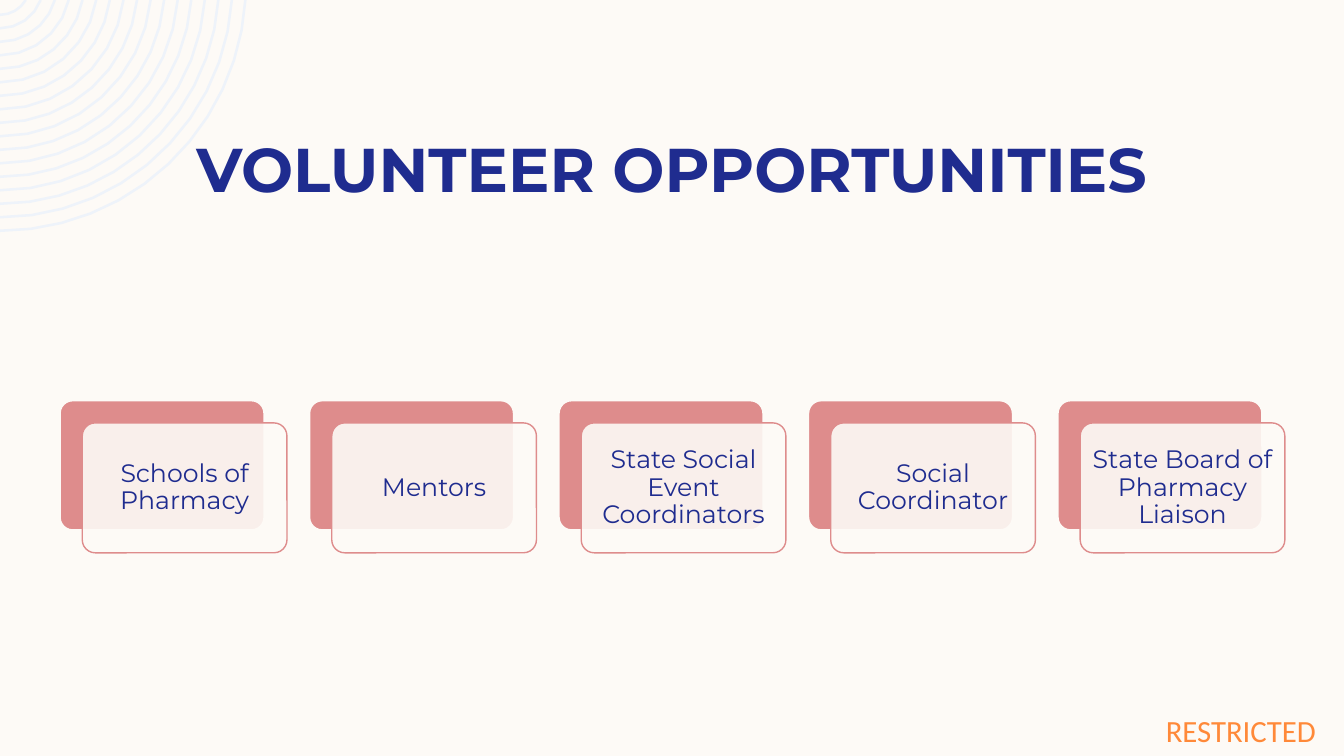
from math import asin, cos, pi, sin

from lxml.etree import SubElement
from pptx import Presentation
from pptx.dml.color import RGBColor
from pptx.enum.shapes import MSO_SHAPE as Preset
from pptx.enum.text import MSO_ANCHOR as Anchor, MSO_AUTO_SIZE as AutoSize, PP_ALIGN as Align
from pptx.oxml.ns import qn
from pptx.util import Pt

CREAM = RGBColor(0xFD, 0xFA, 0xF6)
NAVY = RGBColor(0x1F, 0x2C, 0x8F)
ROSE = RGBColor(0xDE, 0x8C, 0x8C)
ICE = RGBColor(0xEE, 0xF3, 0xFA)
ORANGE = RGBColor(0xFF, 0x89, 0x39)

ROLES = [
    "Schools of Pharmacy",
    "Mentors",
    "State Social Event Coordinators",
    "Social Coordinator",
    "State Board of Pharmacy Liaison",
]


def write(shape, text, size, color, font="Montserrat", bold=False, align=Align.CENTER,
          anchor=Anchor.MIDDLE, margins=(0, 0, 0, 0), spacing=0.9):
    frame = shape.text_frame
    frame.word_wrap = True
    frame.auto_size = AutoSize.NONE
    frame.vertical_anchor = anchor
    frame.margin_left, frame.margin_top, frame.margin_right, frame.margin_bottom = map(Pt, margins)
    para = frame.paragraphs[0]
    para.alignment = align
    para.line_spacing = spacing
    span = para.add_run()
    span.text = text
    span.font.name = font
    span.font.size = Pt(size)
    span.font.bold = bold
    span.font.color.rgb = color


def add_rings(page, left, top, count=17, smallest=21.4, step=9.64, rise=10.8):
    def arc(radius, steps):
        start = asin(rise / radius)
        angles = [start + (pi / 2 - start) * i / steps for i in range(steps + 1)]
        return [(Pt(left + radius * cos(a)), Pt(top - rise + radius * sin(a))) for a in angles]

    arcs = [arc(smallest + step * index, 4 + index // 2) for index in range(count)]
    builder = page.shapes.build_freeform(*arcs[0][0])
    builder.add_line_segments(arcs[0][1:], close=False)
    for points in arcs[1:]:
        builder.move_to(*points[0])
        builder.add_line_segments(points[1:], close=False)
    rings = builder.convert_to_shape()
    rings.shadow.inherit = False
    rings.fill.background()
    rings.line.color.rgb = ICE
    rings.line.width = Pt(1.8)


def add_title(page, left, top, width, height):
    title = page.shapes.title
    title.left, title.top, title.width, title.height = map(Pt, (left, top, width, height))
    write(title, "VOLUNTEER OPPORTUNITIES", 44.1, NAVY, bold=True,
          anchor=Anchor.TOP, margins=(7.2, 3.6, 7.2, 3.6))


def add_panel(page, left, top, width, height, fill, line, weight):
    panel = page.shapes.add_shape(Preset.ROUNDED_RECTANGLE, *map(Pt, (left, top, width, height)))
    panel.adjustments[0] = 0.1
    panel.shadow.inherit = False
    panel.fill.solid()
    panel.fill.fore_color.rgb = fill
    panel.line.color.rgb = line
    panel.line.width = Pt(weight)
    return panel


def add_card(page, role, left, top, width, height, shift=16.1):
    add_panel(page, left, top, width, height, ROSE, CREAM, 1.5)
    front = add_panel(page, left + shift, top + shift, width, height, CREAM, ROSE, 1)
    color = front.fill._xPr.find(qn("a:solidFill"))[0]
    SubElement(color, qn("a:alpha"), val="90000")
    write(front, role, 18, NAVY, margins=(5, 5, 5, 5))


def add_cards(page, left, top, pitch, width, height):
    for index, role in enumerate(ROLES):
        add_card(page, role, left + index * pitch, top, width, height)


def add_marking(page, left, top, width, height):
    box = page.shapes.add_textbox(*map(Pt, (left, top, width, height)))
    write(box, "RESTRICTED", 22, ORANGE, font="Calibri", align=Align.RIGHT,
          margins=(0, 0, 20, 0), spacing=1.0)


def main():
    deck = Presentation()
    deck.slide_width, deck.slide_height = Pt(960), Pt(540)
    page = deck.slides.add_slide(deck.slide_layouts[5])
    page.background.fill.solid()
    page.background.fill.fore_color.rgb = CREAM
    add_rings(page, 0, 0)
    add_title(page, 60, 96, 840, 60.5)
    add_cards(page, 42.7, 286, 178.2, 146.2, 92.8)
    add_marking(page, 812, 503.3, 148, 36.7)
    deck.save("out.pptx")


if __name__ == "__main__":
    main()
